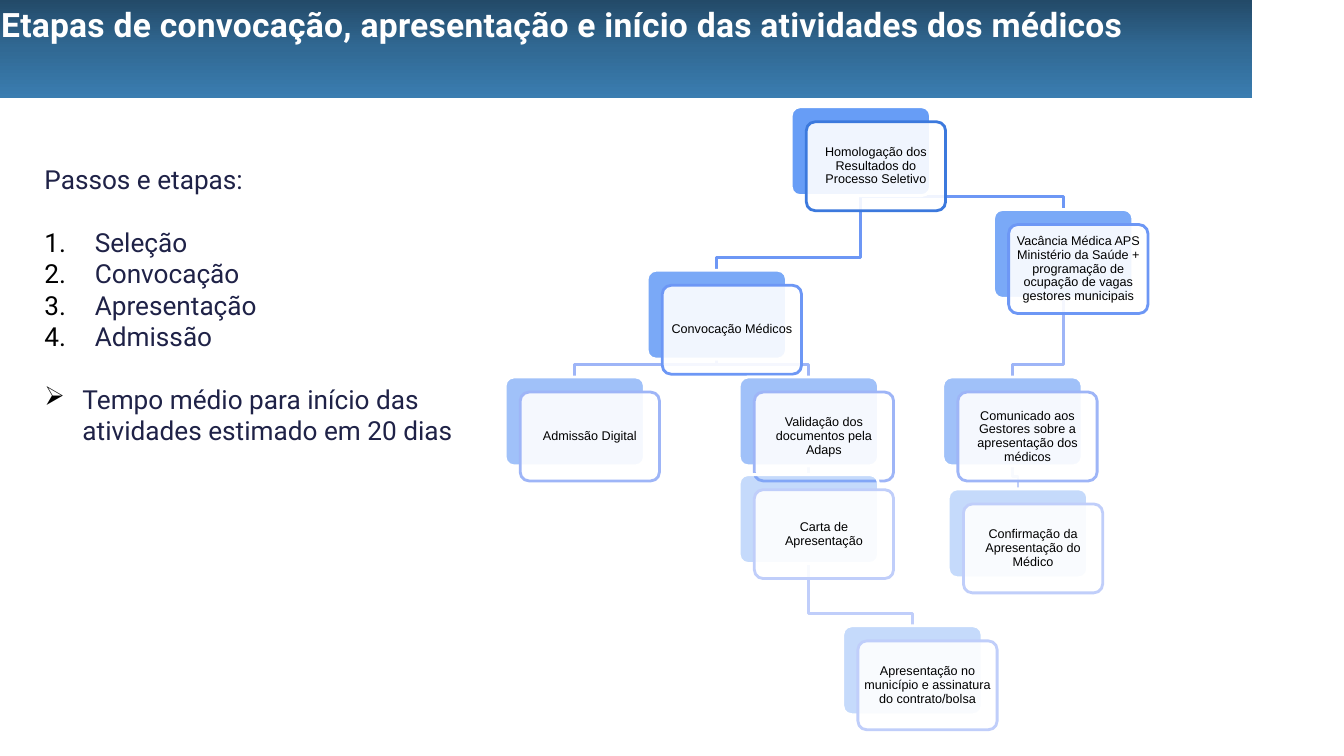
from copy import deepcopy

from lxml.etree import SubElement
from pptx import Presentation
from pptx.dml.color import RGBColor
from pptx.enum.shapes import MSO_CONNECTOR as Link, MSO_SHAPE as Shape
from pptx.enum.text import MSO_ANCHOR as Anchor, PP_ALIGN as Align
from pptx.oxml.ns import qn
from pptx.util import Cm, Pt

CARD_W, CARD_H = 3.51, 2.24
CARD_SHIFT = 0.38
BEND = 0.32  # height of a link's last segment above its target

# Level of the chart: (opacity of the blue card, outline of the white card)
LEVELS = [(80, "3C79DD"), (70, "6D97F5"), (50, "9EB5F7"), (30, "C0CEFA")]

# Step: (left, top, level, wording)
STEPS = {
    "homologação": (19.94, 2.69, 0, "Homologação dos Resultados do Processo Seletivo"),
    "convocação": (16.31, 6.81, 1, "Convocação Médicos"),
    "admissão": (12.73, 9.5, 2, "Admissão Digital"),
    "validação": (18.63, 9.5, 2, "Validação dos documentos pela Adaps"),
    "carta": (18.63, 11.96, 3, "Carta de Apresentação"),
    "contrato": (21.24, 15.77, 3,
                 "Apresentação no município e assinatura do contrato/bolsa"),
    "vacância": (25.04, 5.28, 1, "Vacância Médica APS Ministério da Saúde + "
                 "programação de ocupação de vagas gestores municipais"),
    "comunicado": (23.76, 9.5, 2,
                   "Comunicado aos Gestores sobre a apresentação dos médicos"),
    "confirmação": (23.9, 12.32, 3, "Confirmação da Apresentação do Médico"),
}
LINKS = [
    ("homologação", "convocação"), ("homologação", "vacância"),
    ("convocação", "admissão"), ("convocação", "validação"),
    ("validação", "carta"), ("carta", "contrato"),
    ("vacância", "comunicado"), ("comunicado", "confirmação"),
]


def rgb(code):
    return RGBColor.from_string(code)


def set_margins(frame, left, top, right, bottom):
    frame.margin_left, frame.margin_top = Cm(left), Cm(top)
    frame.margin_right, frame.margin_bottom = Cm(right), Cm(bottom)


def add_run(paragraph, wording, font, size, color, bold=False):
    run = paragraph.add_run()
    run.text = wording
    run.font.name, run.font.size, run.font.bold = font, Pt(size), bold
    run.font.color.rgb = rgb(color)
    return run


def add_title(slide, wording):
    band = slide.shapes.add_shape(Shape.RECTANGLE, 0, 0, Cm(31.55), Cm(2.46))
    band.shadow.inherit = False
    band.line.fill.background()
    # Three-colour gradient from top to bottom
    band.fill.gradient()
    band.fill.gradient_angle = 270
    first_stop = band.fill.gradient_stops[0]._gs
    first_stop.addnext(deepcopy(first_stop))
    shades = [(0, "234A68"), (0.5, "316994"), (1, "3A7DB0")]
    for stop, (position, color) in zip(band.fill.gradient_stops, shades):
        stop.position, stop.color.rgb = position, rgb(color)
    heading = band.text_frame
    heading.word_wrap = True
    heading.vertical_anchor = Anchor.TOP
    set_margins(heading, 0.03, 0.1, 0, 0)
    heading.paragraphs[0].alignment = Align.LEFT
    run = add_run(heading.paragraphs[0], wording, "Roboto", 24, "FFFFFF", True)
    run.font._element.set("spc", "20")


def add_bullet(paragraph, indent, tag, **settings):
    props = paragraph._p.get_or_add_pPr()
    props.set("marL", str(Cm(indent)))
    props.set("indent", str(-Cm(indent)))
    SubElement(SubElement(props, qn("a:buClr")), qn("a:srgbClr"), val="000000")
    SubElement(props, qn(tag), **settings)


def add_overview(slide):
    frame = slide.shapes.add_textbox(Cm(0.79), Cm(3.78), Cm(12.57), Cm(7.87)).text_frame
    frame.word_wrap = True
    set_margins(frame, 0.33, 0.33, 0.33, 0.33)
    add_run(frame.paragraphs[0], "Passos e etapas:", "Roboto", 18.7, "1F2247")
    stages = ["Seleção", "Convocação", "Apresentação", "Admissão"]
    duration = "Tempo médio para início das atividades estimado em 20 dias"
    for wording in stages + [duration]:
        item = frame.add_paragraph()
        if wording == duration:
            add_bullet(item, 0.96, "a:buChar", char="➢")
        else:
            add_bullet(item, 1.27, "a:buAutoNum", type="arabicPeriod")
        if wording in (stages[0], duration):
            item.space_before = Pt(22.5)
        add_run(item, wording, "Roboto", 18.7, "1F2247")


def add_card(slide, left, top, fill, opacity, outline):
    card = slide.shapes.add_shape(Shape.ROUNDED_RECTANGLE, Cm(left), Cm(top),
                                  Cm(CARD_W), Cm(CARD_H))
    card.adjustments[0] = 0.1
    card.shadow.inherit = False
    card.fill.solid()
    card.fill.fore_color.rgb = rgb(fill)
    tint = card._element.spPr.find(qn("a:solidFill")).find(qn("a:srgbClr"))
    SubElement(tint, qn("a:alpha"), val=str(opacity * 1000))
    card.line.color.rgb = rgb(outline)
    card.line.width = Pt(2)
    return card


def add_step(slide, left, top, level, wording):
    opacity, outline = LEVELS[level]
    back = add_card(slide, left, top, "4285F4", opacity, "FFFFFF")
    front = add_card(slide, left + CARD_SHIFT, top + CARD_SHIFT, "FFFFFF", 90, outline)
    label = front.text_frame
    label.word_wrap = True
    label.vertical_anchor = Anchor.MIDDLE
    set_margins(label, 0.1, 0.1, 0.1, 0.1)
    label.paragraphs[0].alignment = Align.CENTER
    label.paragraphs[0].line_spacing = 0.9
    add_run(label.paragraphs[0], wording, "Arial", 9, "000000")
    return back


def add_link(slide, parent, child, color):
    start_x, start_y = parent.left + parent.width // 2, parent.top + parent.height
    end_x, end_y = child.left + child.width // 2, child.top
    if start_x == end_x:
        link = slide.shapes.add_connector(Link.STRAIGHT, start_x, start_y, end_x, end_y)
        link.begin_connect(parent, 2)
        link.end_connect(child, 0)
        SubElement(link._element.spPr, qn("a:effectLst"))
    else:
        bend_y = end_y - Cm(BEND)
        outline = slide.shapes.build_freeform(start_x, start_y)
        outline.add_line_segments(
            [(start_x, bend_y), (end_x, bend_y), (end_x, end_y)], close=False)
        link = outline.convert_to_shape()
        link.fill.background()
        link.shadow.inherit = False
    link.line.color.rgb = rgb(color)
    link.line.width = Pt(2)
    # Links lie behind every card
    slide.shapes._spTree.insert(2, link._element)


def main():
    deck = Presentation()
    deck.slide_width, deck.slide_height = Cm(33.87), Cm(19.05)
    slide = deck.slides.add_slide(deck.slide_layouts[6])

    # Flow of steps
    cards = {step: add_step(slide, *details) for step, details in STEPS.items()}
    for parent, child in LINKS:
        child_level = STEPS[child][2]
        add_link(slide, cards[parent], cards[child], LEVELS[child_level][1])

    # Stages and title
    add_overview(slide)
    add_title(slide, "Etapas de convocação, apresentação e início das atividades dos médicos")
    deck.save("out.pptx")


if __name__ == "__main__":
    main()
